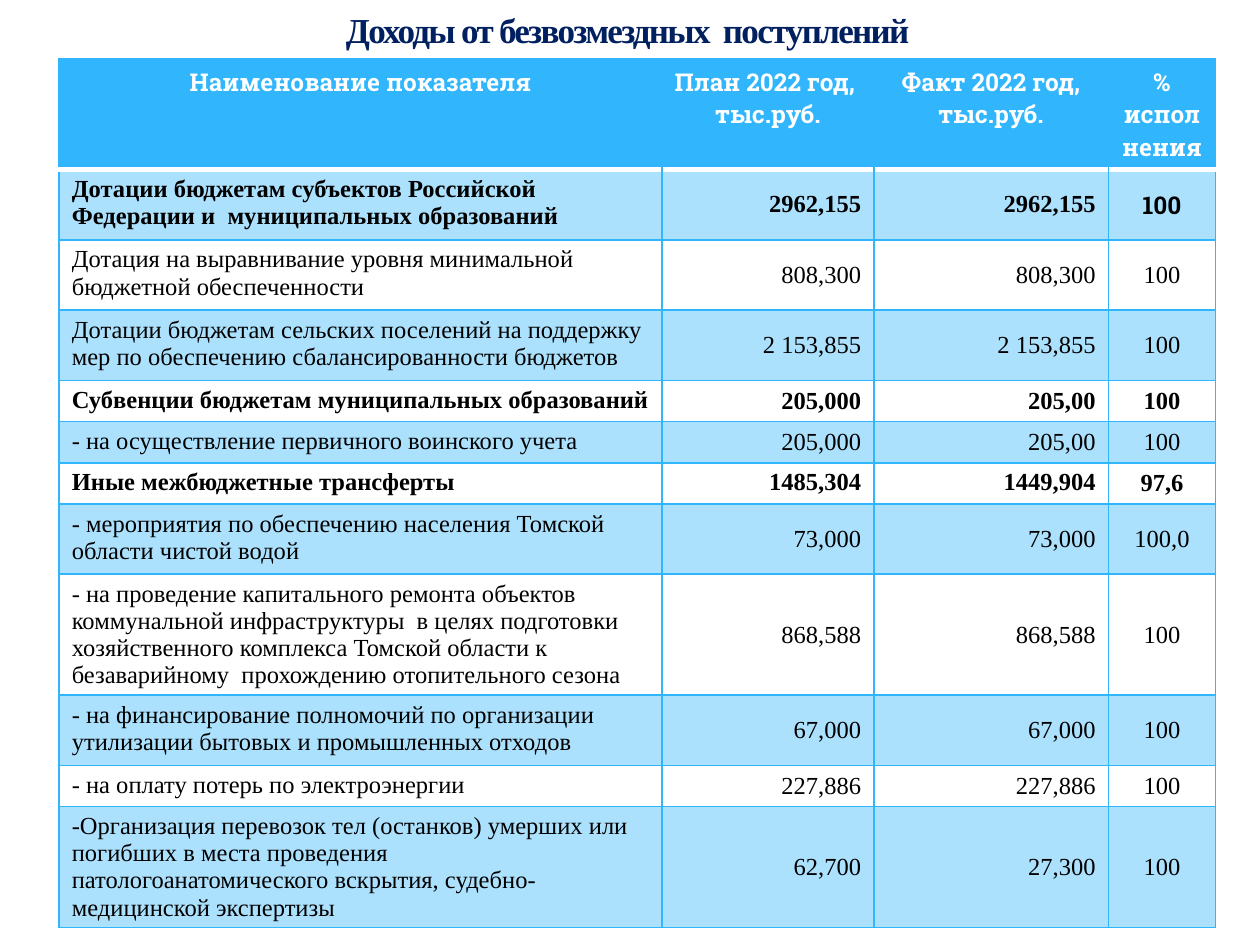
from pptx import Presentation
from pptx.dml.color import RGBColor
from pptx.enum.text import MSO_ANCHOR, PP_ALIGN
from pptx.oxml.ns import qn
from pptx.util import Pt
from lxml.etree import SubElement

BLUE, WHITE, BLACK, NAVY = "31B6FD", "FFFFFF", "000000", "002060"
SERIF, SLAB = "Times New Roman", "Roboto Slab"
NO_STYLE = "{2D5ABB26-0587-4C30-8999-92F81FD0307C}"
SHORT, TALL = 23.5, 40.2

HEADING = "Доходы от безвозмездных  поступлений"
HEADERS = ("Наименование показателя", "План 2022 год,  тыс.руб.",
           "Факт 2022 год, тыс.руб.", "% исполнения")
COLUMN_WIDTHS = (344.5, 121, 134, 61.4)
HEADER_HEIGHT = 56.88

# name, plan, fact, percent, bold, row height (long names grow the row)
INCOMES = [
    ("Дотации бюджетам субъектов Российской Федерации и  муниципальных образований",
     "2962,155", "2962,155", "100", True, TALL),
    ("Дотация на выравнивание уровня минимальной бюджетной обеспеченности",
     "808,300", "808,300", "100", False, TALL),
    ("Дотации бюджетам сельских поселений на поддержку мер по обеспечению "
     "сбалансированности бюджетов",
     "2 153,855", "2 153,855", "100", False, TALL),
    ("Субвенции бюджетам муниципальных образований",
     "205,000", "205,00", "100", True, SHORT),
    ("- на осуществление первичного воинского учета",
     "205,000", "205,00", "100", False, SHORT),
    ("Иные межбюджетные трансферты",
     "1485,304", "1449,904", "97,6", True, SHORT),
    ("- мероприятия по обеспечению населения Томской области чистой водой",
     "73,000", "73,000", "100,0", False, TALL),
    ("- на проведение капитального ремонта объектов коммунальной инфраструктуры  "
     "в целях подготовки хозяйственного комплекса Томской области к безаварийному  "
     "прохождению отопительного сезона",
     "868,588", "868,588", "100", False, SHORT),
    ("- на финансирование полномочий по организации утилизации бытовых и "
     "промышленных отходов",
     "67,000", "67,000", "100", False, TALL),
    ("- на оплату потерь по электроэнергии",
     "227,886", "227,886", "100", False, SHORT),
    ("-Организация перевозок тел (останков) умерших или погибших в места проведения "
     "патологоанатомического вскрытия, судебно-медицинской экспертизы",
     "62,700", "27,300", "100", False, SHORT),
]
ALIGNMENTS = (PP_ALIGN.LEFT, PP_ALIGN.RIGHT, PP_ALIGN.RIGHT, PP_ALIGN.CENTER)


def rgb(value):
    return RGBColor.from_string(value)


def write(frame, text, size, font, color, bold, align):
    frame.text = text
    paragraph = frame.paragraphs[0]
    paragraph.alignment = align
    run = paragraph.runs[0]
    run.font.size, run.font.name, run.font.bold = Pt(size), font, bold
    run.font.color.rgb = rgb(color)
    return run


def add_borders(cell, borders):
    """Borders map a side (L, R, T, B in that order) to colour and width."""
    properties = cell._tc.get_or_add_tcPr()
    for side, (color, width) in borders.items():
        line = SubElement(properties, qn(f"a:ln{side}"), w=str(Pt(width)))
        fill = SubElement(line, qn("a:solidFill"))
        SubElement(fill, qn("a:srgbClr"), val=color)


def fill_cell(cell, color, opacity=100):
    cell.fill.solid()
    cell.fill.fore_color.rgb = rgb(color)
    if opacity < 100:
        tint = cell._tc.tcPr.find(qn("a:solidFill")).find(qn("a:srgbClr"))
        SubElement(tint, qn("a:alpha"), val=str(opacity * 1000))


presentation = Presentation()
presentation.slide_width, presentation.slide_height = Pt(720), Pt(540)
slide = presentation.slides.add_slide(presentation.slide_layouts[6])

# Income table
table_frame = slide.shapes.add_table(len(INCOMES) + 1, len(HEADERS), Pt(33.84), Pt(33.84),
                                     Pt(sum(COLUMN_WIDTHS)), Pt(506.16))
incomes = table_frame.table
incomes._tbl.tblPr.find(qn("a:tableStyleId")).text = NO_STYLE
for column, width in zip(incomes.columns, COLUMN_WIDTHS):
    column.width = Pt(width)
for row, height in zip(incomes.rows, [HEADER_HEIGHT] + [income[-1] for income in INCOMES]):
    row.height = Pt(height)
table_frame.height = Pt(506.16)

# Header row: outer blue edges and a thick white rule below
thin, thick = (BLUE, 1), (WHITE, 3)
for c, header in enumerate(HEADERS):
    cell = incomes.cell(0, c)
    borders = {"L": thin} if c == 0 else {}
    if c == len(HEADERS) - 1:
        borders["R"] = thin
    add_borders(cell, {**borders, "T": thin, "B": thick})
    fill_cell(cell, BLUE)
    write(cell.text_frame, header, 14, SLAB, WHITE, True, PP_ALIGN.CENTER)

# Income rows: every other one tinted
for r, (*texts, bold, _) in enumerate(INCOMES, start=1):
    for c, (text, align) in enumerate(zip(texts, ALIGNMENTS)):
        cell = incomes.cell(r, c)
        top = {} if r == 1 else {"T": thin}
        add_borders(cell, {"L": thin, "R": thin, **top, "B": thin})
        if r % 2:
            fill_cell(cell, BLUE, 40)
        else:
            cell.fill.background()
        font = SLAB if (r, c) == (1, 3) else SERIF
        write(cell.text_frame, text, 14, font, BLACK, bold, align)
        if c > 0 and (r, c) not in ((6, 1), (6, 2)):
            cell.vertical_anchor = MSO_ANCHOR.MIDDLE

# Heading
heading = slide.shapes.add_textbox(Pt(82.08), 0, Pt(552.96), Pt(33.84)).text_frame
heading.word_wrap = True
heading.vertical_anchor = MSO_ANCHOR.MIDDLE
heading_run = write(heading, HEADING, 20, SERIF, NAVY, True, PP_ALIGN.CENTER)
heading_run._r.get_or_add_rPr().set("spc", "-100")

presentation.save("out.pptx")
